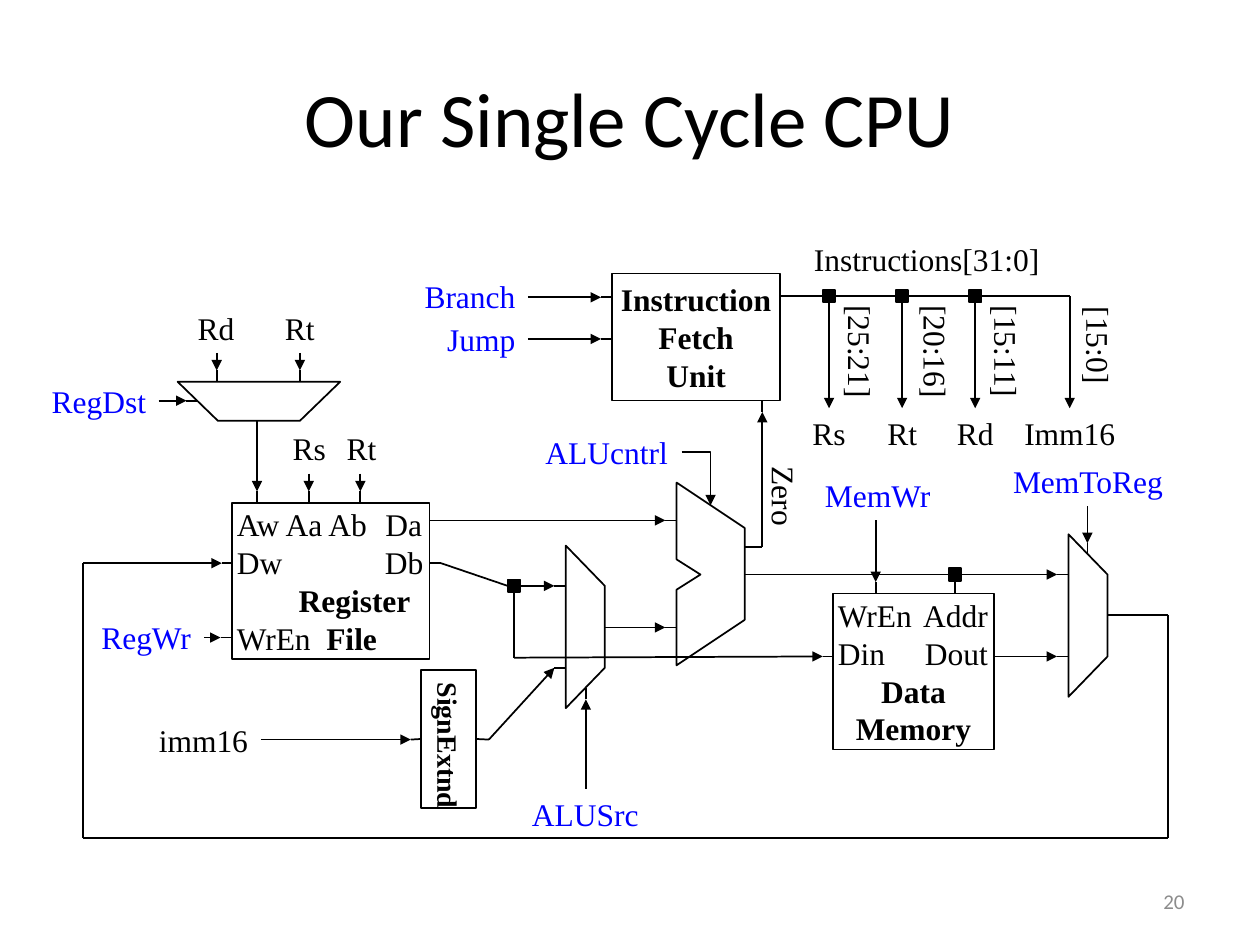
from lxml import etree
from pptx import Presentation
from pptx.dml.color import RGBColor
from pptx.enum.shapes import MSO_CONNECTOR, MSO_SHAPE
from pptx.enum.text import MSO_ANCHOR, MSO_AUTO_SIZE, PP_ALIGN
from pptx.oxml.ns import qn
from pptx.util import Cm, Pt

STRAIGHT, ELBOW = MSO_CONNECTOR.STRAIGHT, MSO_CONNECTOR.ELBOW
RECTANGLE = MSO_SHAPE.RECTANGLE
MIDDLE, TOP = MSO_ANCHOR.MIDDLE, MSO_ANCHOR.TOP
GROW = MSO_AUTO_SIZE.SHAPE_TO_FIT_TEXT
LEFT, CENTER, RIGHT = PP_ALIGN.LEFT, PP_ALIGN.CENTER, PP_ALIGN.RIGHT
COLORS = {"ink": "000000", "paper": "FFFFFF", "control": "0000FF", "number": "8C8C8C"}
JUNCTION = 0.1
STUB = 0.09


def length(inches):
    return Cm(inches * 2.54)


class Diagram:
    serif, sans = "Times New Roman", "Calibri"

    def __init__(self, slide):
        self.shapes = slide.shapes
        self.sites = []

    def color(self, name):
        return RGBColor.from_string(COLORS[name])

    def style_shape(self, shape, fill):
        shape.shadow.inherit = False
        shape.fill.solid()
        shape.fill.fore_color.rgb = self.color(fill)
        self.style_line(shape)

    def style_line(self, shape):
        shape.line.color.rgb = self.color("ink")
        shape.line.width = Pt(1)

    def style_para(self, para, size=18, font=None, color="ink", align=CENTER):
        para.alignment = align
        para.font.size = Pt(size)
        para.font.name = font or self.serif
        para.font.color.rgb = self.color(color)

    def text(self, words, left, top, width, height=0.4, turn=0, anchor=TOP, grow=True, **style):
        box = self.shapes.add_textbox(*map(length, (left, top, width, height)))
        box.rotation = turn
        frame = box.text_frame
        frame.word_wrap = not grow
        frame.vertical_anchor = anchor
        if grow:
            frame.auto_size = GROW
        frame.text = words
        self.style_para(frame.paragraphs[0], **style)

    def rectangle(self, left, top, width, height, fill="paper"):
        box = self.shapes.add_shape(RECTANGLE, *map(length, (left, top, width, height)))
        self.style_shape(box, fill)
        middle_x, middle_y = left + width / 2, top + height / 2
        sides = [(middle_x, top), (left, middle_y), (middle_x, top + height), (left + width, middle_y)]
        self.sites += [(box, number, point) for number, point in enumerate(sides)]
        return box

    def junction(self, x, y):
        self.rectangle(x - JUNCTION / 2, y - JUNCTION / 2, JUNCTION, JUNCTION, "ink")

    def unit(self, left, top, width, height, rows):
        frame = self.rectangle(left, top, width, height).text_frame
        frame.word_wrap = True
        frame.vertical_anchor = MIDDLE
        frame.margin_left = frame.margin_right = length(0.04)
        frame.margin_top = frame.margin_bottom = 0
        for index, (plain, bold, layout, offset) in enumerate(rows):
            para = frame.add_paragraph() if index else frame.paragraphs[0]
            self.style_para(para, align=LEFT if layout else CENTER)
            properties = para._p.get_or_add_pPr()
            if layout == "indent":
                properties.set("marL", str(length(offset)))
            elif layout:
                tabs = etree.Element(qn("a:tabLst"))
                etree.SubElement(tabs, qn("a:tab"), pos=str(length(offset)), algn=layout)
                properties.insert(0, tabs)
            spans = [(words, heavy) for words, heavy in ((plain, False), (bold, True)) if words]
            if len(spans) == 1:
                para.font.bold = spans[0][1]
            for words, heavy in spans:
                span = para.add_run()
                span.text = words
                if len(spans) > 1:
                    span.font.bold = heavy

    def vertical_unit(self, words, left, top, width, height):
        frame = self.rectangle(left, top, width, height).text_frame
        frame.word_wrap = False
        frame.vertical_anchor = MIDDLE
        frame._txBody.bodyPr.set("vert", "eaVert")
        frame.text = words
        self.style_para(frame.paragraphs[0], size=16)
        frame.paragraphs[0].font.bold = True

    def outline(self, points):
        corners = [tuple(map(length, point)) for point in points]
        builder = self.shapes.build_freeform(*corners[0], scale=1.0)
        builder.add_line_segments(corners[1:], close=True)
        self.style_shape(builder.convert_to_shape(), "paper")

    def mux(self, left, top, flat=False):
        corners = [(0, 0), (0.31, 0.32), (0.31, 0.97), (0, 1.29)]
        if flat:
            corners = [(y, x) for x, y in corners]
        self.outline([(left + x, top + y) for x, y in corners])

    def connector(self, start, end, arrow=False, kind=STRAIGHT):
        line = self.shapes.add_connector(kind, *map(length, (*start, *end)))
        self.style_line(line)
        if arrow:
            etree.SubElement(line.line._get_or_add_ln(), qn("a:tailEnd"), type="triangle")
        etree.SubElement(line._element.spPr, qn("a:effectLst"))
        return line

    def wire(self, *points, arrow=False):
        for index, (start, end) in enumerate(zip(points, points[1:]), 2):
            line = self.connector(start, end, arrow and index == len(points))
            for join, point in ((line.begin_connect, start), (line.end_connect, end)):
                for box, number, site in self.sites:
                    if max(abs(point[0] - site[0]), abs(point[1] - site[1])) < 0.015:
                        join(box, number)

    def corner_arrow(self, start, end):
        line = self.connector(start, end, True, ELBOW)
        line._element.spPr.find(qn("a:prstGeom")).set("prst", "bentConnector2")


def main():
    deck = Presentation()
    deck.slide_width, deck.slide_height = length(10), length(7.5)
    page = Diagram(deck.slides.add_slide(deck.slide_layouts[6]))

    page.text("Our Single Cycle CPU", 0.5, 0.3, 9, 1.25, anchor=MIDDLE, grow=False, size=44, font=page.sans)
    page.text("20", 7.17, 6.95, 2.33, anchor=MIDDLE, grow=False,
              size=12, font=page.sans, color="number", align=RIGHT)

    page.outline([(5.37, 3.83), (5.91, 4.19), (5.91, 4.92), (5.37, 5.28),
                  (5.37, 4.68), (5.56, 4.56), (5.37, 4.44)])
    page.mux(4.49, 4.33)
    page.mux(8.48, 4.24)
    page.mux(1.41, 3.03, flat=True)

    page.vertical_unit("SignExtnd", 3.34, 5.32, 0.44, 1.09)
    page.unit(4.86, 2.17, 1.33, 1.01, [("", words, None, 0) for words in ("Instruction", "Fetch", "Unit")])
    page.unit(6.61, 4.71, 1.28, 1.24, [
        ("WrEn\tAddr", "", "r", 1.19), ("Din\tDout", "", "r", 1.19),
        ("", "Data", None, 0), ("", "Memory", None, 0)])
    page.unit(1.84, 3.99, 1.57, 1.24, [
        ("Aw Aa Ab\tDa", "", "r", 1.47), ("Dw\tDb", "", "r", 1.48),
        ("", "Register", "indent", 0.49), ("WrEn\t", "File", "l", 0.71)])

    bus = 2.35
    fields = [("Rs", "[25:21]", 6.58, 6.83), ("Rt", "[20:16]", 7.16, 7.43),
              ("Rd", "[15:11]", 7.74, 7.99), ("Imm16", "[15:0]", 8.49, 8.72)]
    junctions = [x for _, _, x, _ in fields[:3]]
    for x in junctions:
        page.junction(x, bus)
    page.junction(4.08, 4.65)
    page.junction(7.58, 4.56)

    edges = [6.19, *(x + side for x in junctions for side in (-0.05, 0.05)), 8.49]
    for start, end in zip(edges[::2], edges[1::2]):
        page.wire((start, bus), (end, bus))
    for name, bits, x, bits_x in fields:
        page.text(name, x - 0.46, 3.24, 0.92)
        page.text(bits, bits_x - 0.47, 2.54 if name == "Imm16" else 2.59, 0.94, turn=90)
        page.wire((x, bus if name == "Imm16" else bus + 0.05), (x, 3.24), arrow=True)

    for words, left, top, width in [
            ("Rd", 1.47, 2.4, 0.49), ("Rt", 2.16, 2.4, 0.44), ("Rs", 2.22, 3.36, 0.47),
            ("Rt", 2.65, 3.36, 0.44), ("imm16", 1.16, 5.67, 0.91), ("Instructions[31:0]", 6.36, 1.86, 1.99)]:
        page.text(words, left, top, width)
    page.text("Zero", 5.89, 3.74, 0.67, turn=90)
    for words, left, top, width in [
            ("Branch", 3.27, 2.15, 0.92), ("Jump", 3.45, 2.49, 0.74), ("ALUSrc", 4.12, 6.26, 1.05),
            ("RegDst", 0.31, 2.98, 0.95), ("ALUcntrl", 4.23, 3.39, 1.17), ("RegWr", 0.7, 4.86, 0.92),
            ("MemWr", 6.44, 3.73, 1.05), ("MemToReg", 7.93, 3.62, 1.41)]:
        page.text(words, left, top, width, color="control")

    for points in [
            [(4.19, 2.36), (4.77, 2.36)], [(4.19, 2.69), (4.77, 2.69)],
            [(1.26, 3.18), (1.48, 3.18)], [(1.62, 5.06), (1.75, 5.06)],
            [(2.07, 5.87), (3.26, 5.87)], [(3.5, 4.13), (5.28, 4.13)],
            [(4.89, 4.98), (5.28, 4.98)], [(4.13, 4.65), (4.4, 4.65)],
            [(7.63, 4.56), (8.39, 4.56)], [(7.98, 5.21), (8.39, 5.21)],
            [(4.08, 4.7), (4.08, 5.22), (6.53, 5.21)],
            [(8.79, 4.88), (9.27, 4.88), (9.27, 6.65), (0.66, 6.65), (0.66, 4.47), (1.76, 4.47)]]:
        page.wire(*points, arrow=True)
        x, y = points[-1]
        page.wire((x, y), (x + STUB, y))

    for x, top, bottom in [(1.72, 2.8, 2.94), (2.38, 2.8, 2.94), (2.04, 3.34, 3.9), (2.45, 3.76, 3.9),
                           (2.86, 3.76, 3.9), (6.95, 4.13, 4.62), (8.63, 4.02, 4.31),
                           (4.65, 6.26, 5.55), (6.05, 4.34, 3.27)]:
        page.wire((x, top), (x, bottom), arrow=True)
        page.wire((x, bottom), (x, bottom + (STUB if bottom > top else -STUB)))

    page.wire((3.78, 5.87), (3.88, 5.87), (4.4, 5.3), arrow=True)
    page.wire((4.4, 5.3), (4.49, 5.3))
    page.wire((3.41, 4.47), (3.5, 4.47), (4.03, 4.65))
    page.wire((5.91, 4.56), (7.53, 4.56))
    page.wire((7.58, 4.61), (7.58, 4.71))
    for start, end, y in [(3.41, 3.5, 4.13), (4.8, 4.89, 4.98), (7.89, 7.98, 5.21), (5.91, 6.05, 4.34)]:
        page.wire((start, y), (end, y))
    page.corner_arrow((5.41, 3.59), (5.64, 4.01))

    deck.save("out.pptx")


if __name__ == "__main__":
    main()
